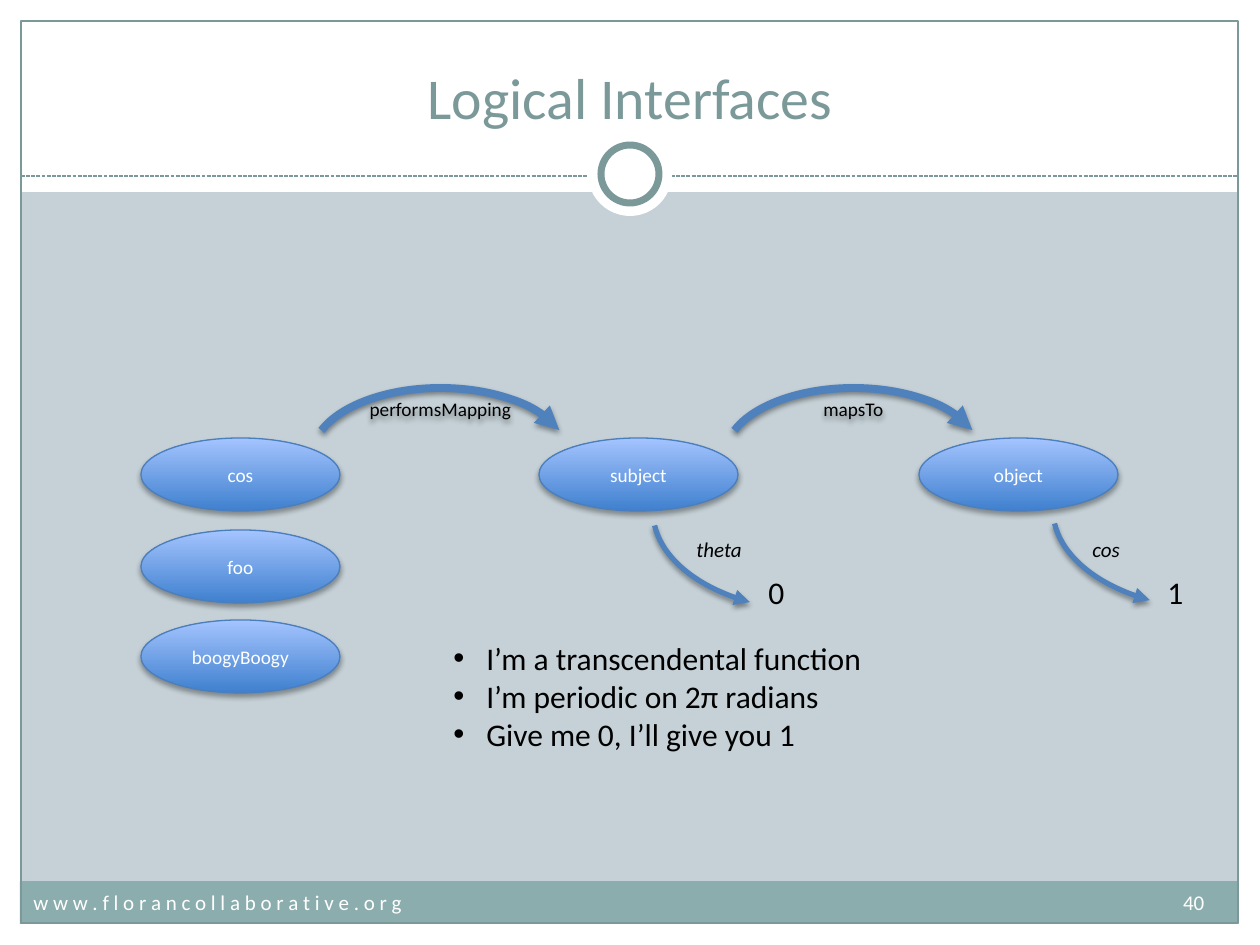
from lxml import etree
from pptx import Presentation
from pptx.dml.color import RGBColor
from pptx.enum.dml import MSO_LINE
from pptx.enum.shapes import MSO_CONNECTOR, MSO_SHAPE
from pptx.enum.text import MSO_ANCHOR, PP_ALIGN
from pptx.oxml.ns import qn
from pptx.util import Pt

RECT, OVAL, ARC = MSO_SHAPE.RECTANGLE, MSO_SHAPE.OVAL, MSO_SHAPE.ARC
STRAIGHT = MSO_CONNECTOR.STRAIGHT
DASH = MSO_LINE.SQUARE_DOT
LEFT, CENTER = PP_ALIGN.LEFT, PP_ALIGN.CENTER
TOP, MIDDLE, BOTTOM = MSO_ANCHOR.TOP, MSO_ANCHOR.MIDDLE, MSO_ANCHOR.BOTTOM

SCALE = 914400 / 126
FONT = "Calibri"
COLORS = {
    "background": "C5D1D7", "white": "FFFFFF", "black": "000000",
    "footer": "8CADAE", "accent": "7C999A", "arrow": "4F81BD",
    "node_line": "4B7EBC", "node_dark": "3F80CE", "node_light": "A4C4FF",
}


def px(n):
    return round(n * SCALE)


def rgb(name):
    return RGBColor.from_string(COLORS[name])


def add_xml(parent, tag, **attrs):
    return etree.SubElement(parent, qn(tag), {k: str(v) for k, v in attrs.items()})


def write_text(sp, lines, size, color="black", align=LEFT, anchor=TOP,
               wrap=True, italic=None):
    tf = sp.text_frame
    tf.word_wrap = wrap
    tf.vertical_anchor = anchor
    font_format = {"name": FONT, "size": Pt(size), "italic": italic}
    for i, line in enumerate(lines):
        p = tf.paragraphs[0] if i == 0 else tf.add_paragraph()
        p.alignment = align
        r = p.add_run()
        r.text = line
        for key, value in font_format.items():
            setattr(r.font, key, value)
        r.font.color.rgb = rgb(color)
    return tf.paragraphs


def add_text(s, box, lines, size, **style):
    sp = s.shapes.add_textbox(*map(px, box))
    return write_text(sp, lines, size, **style)


def add_plain(s, kind, box, fill=None, line=None, width=0.75):
    sp = s.shapes.add_shape(kind, *map(px, box))
    sp.shadow.inherit = False
    if fill:
        sp.fill.solid()
        sp.fill.fore_color.rgb = rgb(fill)
    else:
        sp.fill.background()
    if line:
        sp.line.color.rgb = rgb(line)
        sp.line.width = Pt(width)
    else:
        sp.line.fill.background()
    return sp


def add_shadow(sp, distance, alpha):
    effects = sp._element.spPr.find(qn("a:effectLst"))
    shadow = add_xml(effects, "a:outerShdw", blurRad=Pt(3.1), dist=Pt(distance),
                     dir=90 * 60000, rotWithShape=0)
    color = add_xml(shadow, "a:srgbClr", val=COLORS["black"])
    add_xml(color, "a:alpha", val=alpha * 1000)


def add_node(s, x, y, label):
    sp = add_plain(s, OVAL, (x, y, 199, 73), line="node_line")
    sp.fill.gradient()
    sp.fill.gradient_angle = 90
    for stop, name in zip(sp.fill.gradient_stops, ("node_dark", "node_light")):
        stop.color.rgb = rgb(name)
    add_shadow(sp, 1.8, 35)
    write_text(sp, [label], 11, color="white", align=CENTER, anchor=MIDDLE)


def add_arc(s, box, angles, width, label=None, flip=False):
    sp = add_plain(s, ARC, box, line="arrow", width=width)
    for i, angle in enumerate(angles):
        sp.adjustments[i] = angle * 0.6  # degrees to adjustment units
    add_xml(sp.line._get_or_add_ln(), "a:tailEnd", type="triangle")
    add_shadow(sp, 1.6, 38)
    if flip:
        sp._element.spPr.find(qn("a:xfrm")).set("flipH", "1")
    if label:
        write_text(sp, [label], 11, align=CENTER, anchor=MIDDLE)


def add_bullets(paragraphs):
    for p in paragraphs:
        pPr = p._p.get_or_add_pPr()
        pPr.set("marL", str(px(33)))
        pPr.set("indent", str(-px(33)))
        add_xml(pPr, "a:buFont", typeface="Arial")
        add_xml(pPr, "a:buChar", char="•")


def add_frame(s):
    # White margins, footer band and border
    for box in ((0, 924, 1260, 21), (0, 0, 1260, 192),
                (0, 0, 21, 945), (1239, 0, 21, 945)):
        add_plain(s, RECT, box, fill="white")
    add_plain(s, RECT, (20, 881, 1217, 43), fill="footer")
    add_plain(s, RECT, (21, 21, 1217, 902), line="accent")

    # Dashed rule with the ring on it
    rule = s.shapes.add_connector(STRAIGHT, px(21), px(176), px(1239), px(176))
    rule.line.color.rgb = rgb("accent")
    rule.line.width = Pt(0.75)
    rule.line.dash_style = DASH
    add_xml(rule._element.spPr, "a:effectLst")
    add_plain(s, OVAL, (588, 132, 84, 84), fill="white")
    add_plain(s, OVAL, (601, 145, 58, 58), fill="white", line="accent", width=4)


def add_footer(s):
    address = " ".join("www.florancollaborative.org")
    p = add_text(s, (21, 883, 1216, 50), [address + "\t40"], 12, color="white")[0]
    tabs = add_xml(p._p.get_or_add_pPr(), "a:tabLst")
    add_xml(tabs, "a:tab", pos=px(1171), algn="r")


def main():
    prs = Presentation()
    prs.slide_width, prs.slide_height = px(1260), px(945)
    s = prs.slides.add_slide(prs.slide_layouts[6])
    s.background.fill.solid()
    s.background.fill.fore_color.rgb = rgb("background")

    add_frame(s)
    add_text(s, (42, 32, 1176, 105), ["Logical Interfaces"], 33,
             color="accent", align=CENTER, anchor=BOTTOM)
    add_footer(s)

    # Nodes
    for x, y, label in ((141, 438, "cos"), (539, 438, "subject"),
                        (919, 438, "object"), (141, 530, "foo"),
                        (141, 620, "boogyBoogy")):
        add_node(s, x, y, label)

    # Relations between nodes
    for x, label in ((312, "performsMapping"), (725, "mapsTo")):
        add_arc(s, (x, 388, 257, 136), (192.13, 347.71), 4.5, label=label)

    # Values of the subject and the object
    for x, y in ((653, 412), (1053, 410)):
        add_arc(s, (x, y, 329, 199), (4.94, 53.33), 3, flip=True)
    for x, value in ((756, "0"), (1155, "1")):
        add_text(s, (x, 567, 42, 50), [value], 18, wrap=False)
    for x, width, name in ((684, 77, "theta"), (1080, 59, "cos")):
        add_text(s, (x, 530, width, 38), [name], 12, wrap=False, italic=True)

    # Description of the function
    add_bullets(add_text(s, (441, 633, 451, 165), [
        "I’m a transcendental function",
        "I’m periodic on 2π radians",
        "Give me 0, I’ll give you 1",
    ], 18))

    prs.save("out.pptx")


if __name__ == "__main__":
    main()
